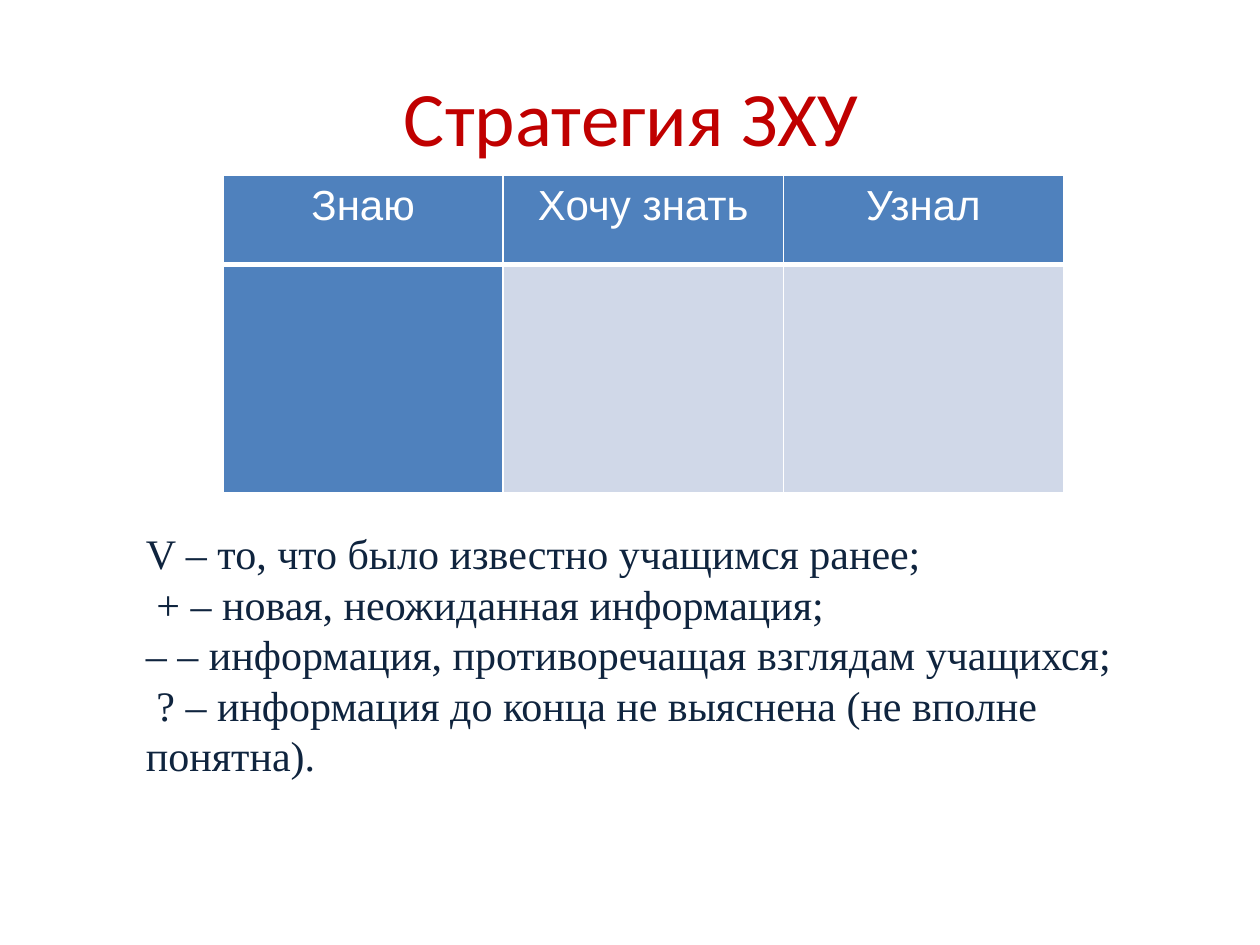
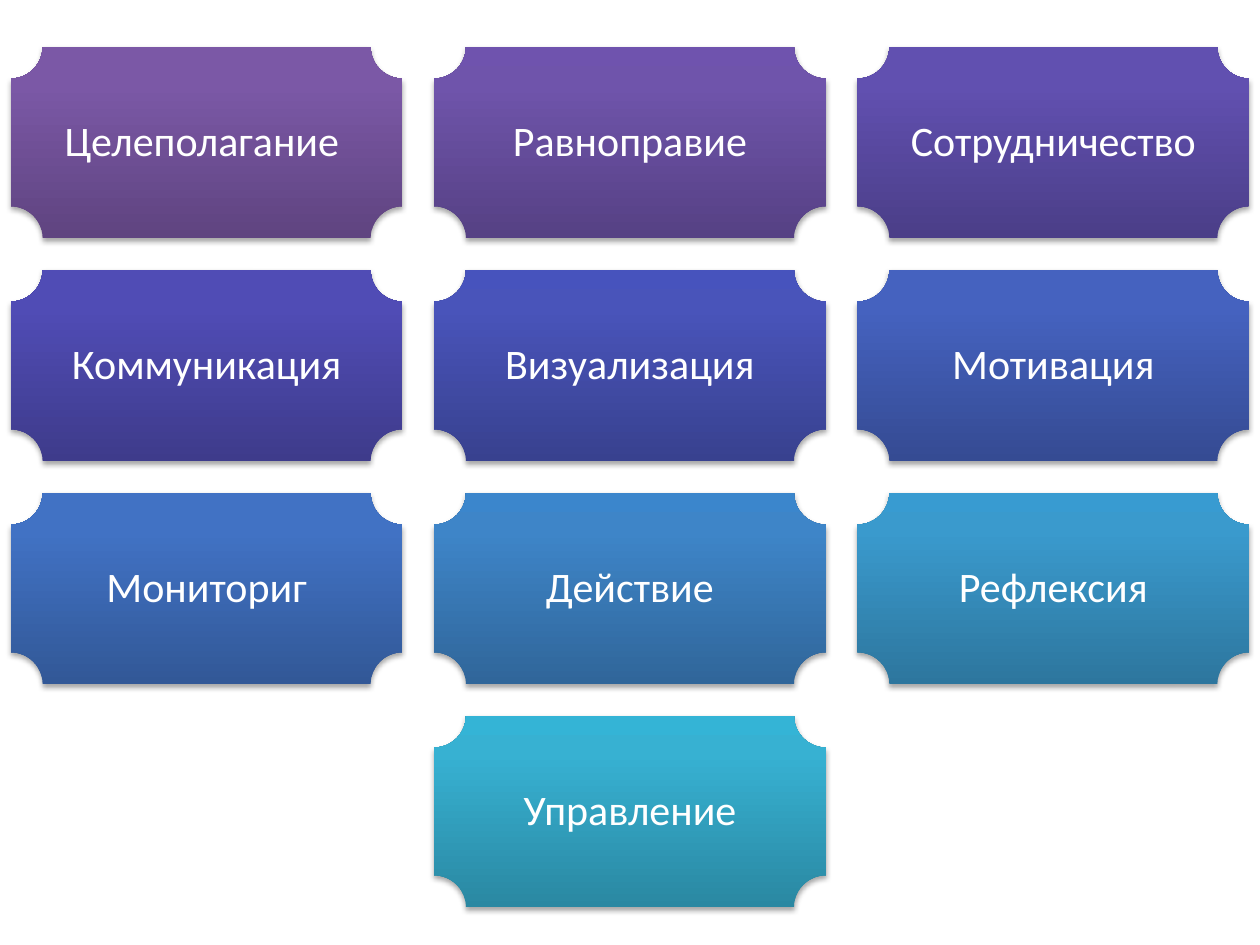
import copy

import pptx
import pptx.dml.color
import pptx.enum.shapes
import pptx.enum.text
import pptx.oxml
import pptx.oxml.ns
import pptx.util
from pptx.dml.color import RGBColor
from pptx.enum.text import MSO_ANCHOR, PP_ALIGN
from pptx.util import Inches

# Colours
RED = RGBColor(0xC0, 0x00, 0x00)
WHITE = RGBColor(0xFF, 0xFF, 0xFF)
NAVY = RGBColor(0x0F, 0x24, 0x3E)
BLUE = RGBColor(0x4F, 0x81, 0xBD)
PALE_BLUE = RGBColor(0xD0, 0xD8, 0xE8)

# Slide contents
COLUMNS = ["Знаю", "Хочу знать", "Узнал"]
MARKS = [
    "V – то, что было известно учащимся ранее;",
    " + – новая, неожиданная информация;",
    "– – информация, противоречащая взглядам учащихся;",
    " ? – информация до конца не выяснена (не вполне понятна).",
]
# Rows of tiles: label and gradient colours from bottom to top
PRINCIPLES = [
    [("Целеполагание ", "5F4480 7B58A6 7C57A8"),
     ("Равноправие", "564184 6F54AB 6F53AE"),
     ("Сотрудничество", "4B3E88 6150B0 604FB3")],
    [("Коммуникация", "3E3B8B 504CB5 4F4BB8"),
     ("Визуализация", "38418F 4954BA 4753BD"),
     ("Мотивация", "354B93 4562BF 4361C2")],
    [("Мониториг", "325897 4172C4 3F72C7"),
     ("Действие", "30669A 3E85C8 3B86CC"),
     ("Рефлексия", "2D769E 3A9ACD 389BD1")],
    [("Управление", "2A88A2 37B1D2 34B4D6")],
]
SLIDE_W, SLIDE_H = 10, 7.5
TILE_W, TILE_H, TILE_GAP, TILE_TOP = 3.11, 1.52, 0.25, 0.37


def write(tf, text, font="Calibri", size=24, color=WHITE,
          align=PP_ALIGN.CENTER, spacing=None):
    """Fill a text frame, one paragraph per line of text."""
    for i, line in enumerate(text.split("\n")):
        p = tf.add_paragraph() if i else tf.paragraphs[0]
        p.alignment = align
        p.line_spacing = spacing
        r = p.add_run()
        r.text = line
        r.font.name = font
        r.font.size = pptx.util.Pt(size)
        r.font.color.rgb = color


def xml(text):
    """Parse one DrawingML element."""
    space = pptx.oxml.ns.nsdecls("a")
    tag, rest = text[1:].split(" ", 1)
    return pptx.oxml.parse_xml(f"<{tag} {space} {rest}")


class Deck:
    def __init__(self):
        self.prs = pptx.Presentation()
        self.prs.slide_width = Inches(SLIDE_W)
        self.prs.slide_height = Inches(SLIDE_H)
        self.s = None

    def slide(self, layout):
        self.s = self.prs.slides.add_slide(self.prs.slide_layouts.get_by_name(layout))

    def title(self, text, x, y, w, h):
        sp = self.s.shapes.title
        sp.left, sp.top, sp.width, sp.height = map(Inches, (x, y, w, h))
        sp.text_frame.vertical_anchor = MSO_ANCHOR.MIDDLE
        write(sp.text_frame, text, size=44, color=RED)

    def text(self, text, x, y, w, h, **style):
        sp = self.s.shapes.add_textbox(*map(Inches, (x, y, w, h)))
        tf = sp.text_frame
        tf.word_wrap = True
        tf.auto_size = pptx.enum.text.MSO_AUTO_SIZE.SHAPE_TO_FIT_TEXT
        write(tf, text, **style)

    def cell(self, cell, fill, bottom=1):
        cell.fill.solid()
        cell.fill.fore_color.rgb = fill
        cell.margin_left = cell.margin_right = Inches(0.05)
        cell.margin_top = cell.margin_bottom = 0
        # Borders come before the fill
        tcPr = cell._tc.get_or_add_tcPr()
        for i, side in enumerate("LRTB"):
            width = pptx.util.Pt(bottom if side == "B" else 1)
            tcPr.insert(i, xml(f'<a:ln{side} w="{width}"><a:solidFill>'
                               f'<a:srgbClr val="{WHITE}"/></a:solidFill></a:ln{side}>'))

    def table(self, heads, x, y, w, heights):
        frame = self.s.shapes.add_table(
            len(heights), len(heads), *map(Inches, (x, y, w, sum(heights))))
        table = frame.table
        for row, height in zip(table.rows, heights):
            row.height = Inches(height)
        for col, head in enumerate(heads):
            top, body = table.cell(0, col), table.cell(1, col)
            self.cell(top, BLUE, bottom=3)
            self.cell(body, PALE_BLUE if col else BLUE)
            write(top.text_frame, head, font="Arial", spacing=1.15)

    def tile(self, text, colors, x, y):
        sp = self.s.shapes.add_shape(
            pptx.enum.shapes.MSO_SHAPE.PLAQUE,
            *map(Inches, (x, y, TILE_W, TILE_H)))
        sp.line.fill.background()
        # Three-stop gradient, running upwards
        sp.fill.gradient()
        sp.fill.gradient_angle = 90
        stops = sp._element.spPr.find(".//" + pptx.oxml.ns.qn("a:gsLst"))
        stops.append(copy.deepcopy(stops[-1]))
        for stop, pos, color in zip(sp.fill.gradient_stops, (0, 0.8, 1), colors.split()):
            stop.position = pos
            stop.color.rgb = RGBColor.from_string(color)
        # Soft shadow below
        sp.shadow.inherit = False
        effects = sp._element.spPr.find(pptx.oxml.ns.qn("a:effectLst"))
        effects.append(xml(
            f'<a:outerShdw blurRad="{pptx.util.Pt(3.1)}" dist="{pptx.util.Pt(1.8)}" '
            'dir="5400000" rotWithShape="0"><a:srgbClr val="000000">'
            '<a:alpha val="35000"/></a:srgbClr></a:outerShdw>'))
        tf = sp.text_frame
        tf.word_wrap = True
        tf.vertical_anchor = MSO_ANCHOR.MIDDLE
        tf.margin_left = tf.margin_right = Inches(0.1)
        tf.margin_top = tf.margin_bottom = Inches(0.1)
        write(tf, text, spacing=0.9)


def main():
    deck = Deck()

    # Slide 1: strategy table and its marks
    deck.slide("Title Only")
    deck.title("Стратегия ЗХУ", 0.51, 0.29, 9, 1.25)
    deck.table(COLUMNS, 1.77, 1.39, 6.67, (0.71, 1.81))
    deck.text("\n".join(MARKS), 1.06, 4.14, 8.19, 2.12,
              font="Times New Roman", color=NAVY, align=PP_ALIGN.LEFT)

    # Slide 2: centred rows of tiles
    deck.slide("Blank")
    for i, row in enumerate(PRINCIPLES):
        left = (SLIDE_W - len(row) * (TILE_W + TILE_GAP) + TILE_GAP) / 2
        for j, (label, colors) in enumerate(row):
            deck.tile(label, colors, left + j * (TILE_W + TILE_GAP),
                      TILE_TOP + i * (TILE_H + TILE_GAP))

    deck.prs.save("out.pptx")


if __name__ == "__main__":
    main()
